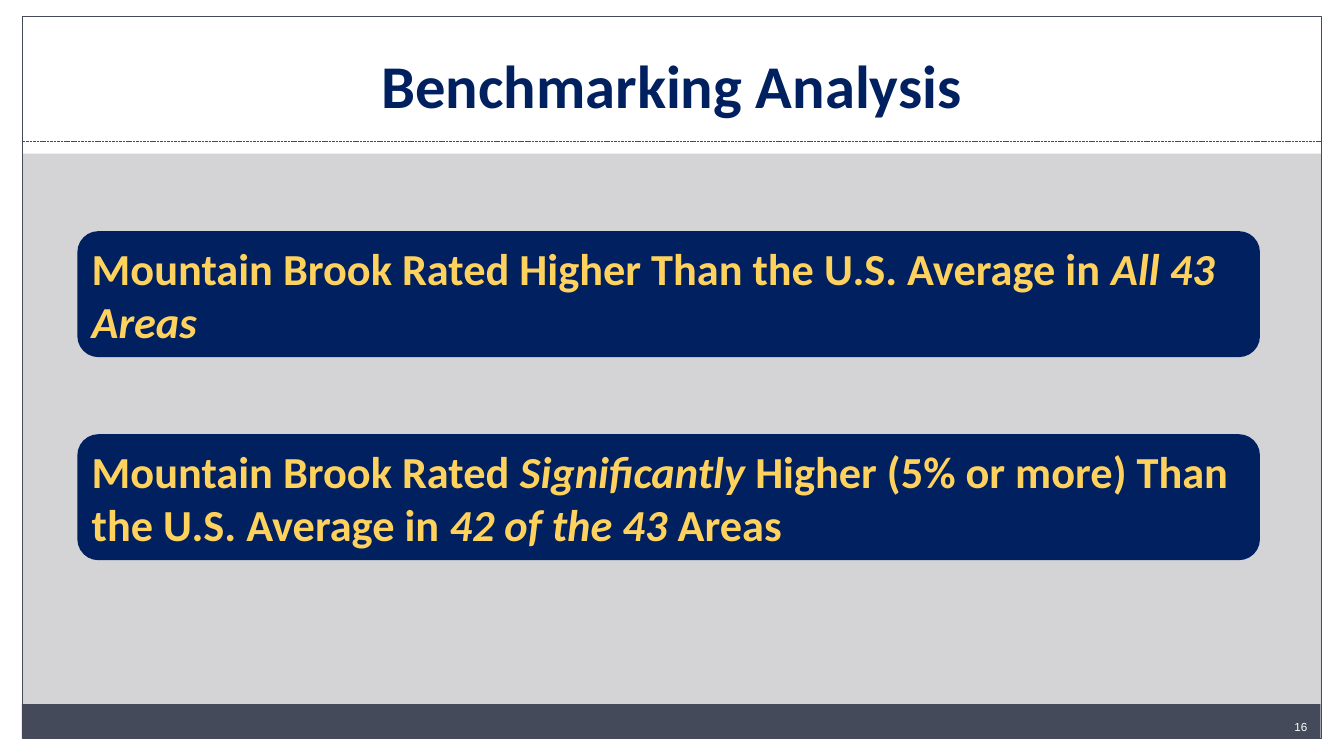
from dataclasses import dataclass

from lxml import etree
from pptx import Presentation
from pptx import util as u
from pptx.dml.color import RGBColor
from pptx.enum import dml, shapes, text
from pptx.oxml import ns

INK = {
    "back": "D4D4D6",
    "white": "FFFFFF",
    "slate": "444A5A",
    "navy": "002060",
    "gold": "FFD25D",
}
WIDE, HIGH = 40.64, 22.86
EDGE = 0.69


@dataclass
class Box:
    x: float
    y: float
    w: float
    h: float

    def place(self) -> list:
        return [u.Cm(v) for v in (self.x, self.y, self.w, self.h)]


@dataclass
class Style:
    font: str
    size: float
    ink: str
    bold: bool
    align: int
    anchor: int


@dataclass
class Part:
    words: str
    slant: bool = False


HEAD = Style("Calibri", 52, "navy", True, text.PP_ALIGN.CENTER, text.MSO_ANCHOR.MIDDLE)
NOTE = Style("Calibri", 38, "gold", True, text.PP_ALIGN.LEFT, text.MSO_ANCHOR.MIDDLE)
PAGE = Style("Arial", 10, "white", False, text.PP_ALIGN.RIGHT, text.MSO_ANCHOR.BOTTOM)

BANDS = [
    (Box(0, 22.35, WIDE, 0.51), "white"),
    (Box(0, 0, WIDE, 4.65), "white"),
    (Box(0, 0, EDGE, HIGH), "white"),
    (Box(WIDE - EDGE, 0, EDGE, HIGH), "white"),
    (Box(0.66, 21.29, 39.27, 1.04), "slate"),
]
NOTES = [
    [
        Part("Mountain Brook Rated Higher Than the U.S. Average in "),
        Part("All 43 Areas", True),
    ],
    [
        Part("Mountain Brook Rated "),
        Part("Significantly", True),
        Part(" Higher (5% or more) Than the U.S. Average in "),
        Part("42 of the 43 ", True),
        Part("Areas"),
    ],
]


def tint(name: str) -> RGBColor:
    return RGBColor.from_string(INK[name])


def draw(slide, box: Box, fill: str = "", line: str = "",
         kind=shapes.MSO_SHAPE.RECTANGLE):
    shape = slide.shapes.add_shape(kind, *box.place())
    shape.shadow.inherit = False
    if fill:
        shape.fill.solid()
        shape.fill.fore_color.rgb = tint(fill)
    else:
        shape.fill.background()
    if line:
        shape.line.color.rgb = tint(line)
        shape.line.width = u.Pt(0.75)
    else:
        shape.line.fill.background()
    return shape


def write(shape, parts: list[Part], style: Style) -> None:
    frame = shape.text_frame
    frame.word_wrap = True
    frame.vertical_anchor = style.anchor
    para = frame.paragraphs[0]
    para.alignment = style.align
    font = para.font
    font.name = style.font
    font.size = u.Pt(style.size)
    font.bold = style.bold
    font.color.rgb = tint(style.ink)
    for part in parts:
        run = para.add_run()
        run.text = part.words
        if part.slant:
            run.font.italic = True


def label(slide, box: Box, words: str, style: Style) -> None:
    write(slide.shapes.add_textbox(*box.place()), [Part(words)], style)


def rule(slide, y: float) -> None:
    line = slide.shapes.add_connector(
        shapes.MSO_CONNECTOR.STRAIGHT,
        u.Cm(EDGE), u.Cm(y), u.Cm(WIDE - EDGE), u.Cm(y))
    line.line.color.rgb = tint("slate")
    line.line.width = u.Pt(0.75)
    line.line.dash_style = dml.MSO_LINE.SQUARE_DOT
    etree.SubElement(line._element.spPr, ns.qn("a:effectLst"))


def main() -> None:
    deck = Presentation()
    deck.slide_width, deck.slide_height = u.Cm(WIDE), u.Cm(HIGH)
    slide = deck.slides.add_slide(deck.slide_layouts[6])
    slide.background.fill.solid()
    slide.background.fill.fore_color.rgb = tint("back")

    for box, fill in BANDS:
        draw(slide, box, fill)
    draw(slide, Box(EDGE, 0.51, WIDE - 2 * EDGE, 21.82), line="slate")
    rule(slide, 4.27)

    label(slide, Box(1.35, 1.27, 37.92, 2.54), "Benchmarking Analysis", HEAD)
    label(slide, Box(37.67, 21.29, 2.11, 1.02), "16", PAGE)

    for row, parts in enumerate(NOTES):
        box = Box(2.34, 6.99 + row * 6.14, 35.76, 3.81)
        shape = draw(slide, box, "navy", kind=shapes.MSO_SHAPE.ROUNDED_RECTANGLE)
        write(shape, parts, NOTE)

    deck.save("out.pptx")


if __name__ == "__main__":
    main()
